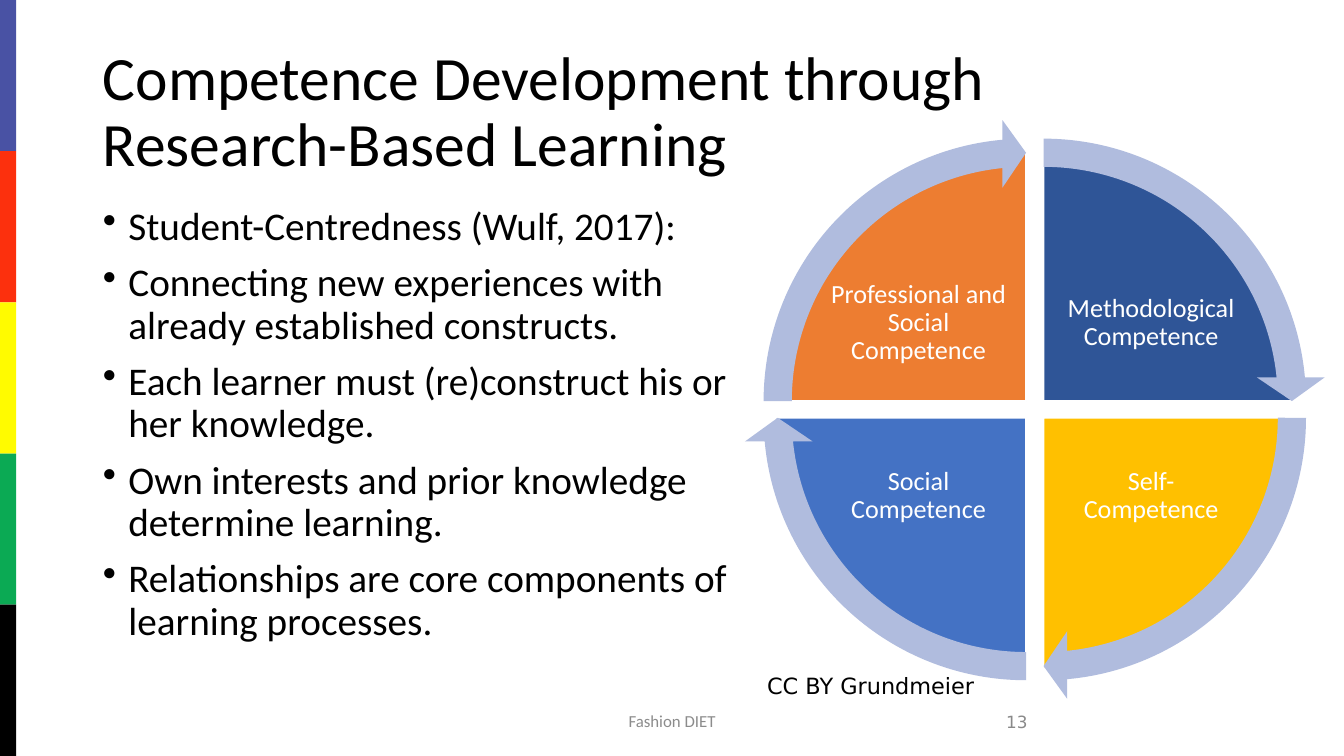
import dataclasses

import lxml.etree
import pptx
import pptx.dml.color
import pptx.enum.shapes
import pptx.enum.text
import pptx.oxml.ns
import pptx.util

SHAPE = pptx.enum.shapes.MSO_SHAPE
ALIGN = pptx.enum.text.PP_ALIGN
ANCHOR = pptx.enum.text.MSO_ANCHOR

COLS, ROWS = 100, 56.25
CELL = pptx.util.Inches(10) / COLS
MID = (77, 30.47)
GAP = (0.65, 0.62)
QUARTER = 54


@dataclasses.dataclass(frozen=True)
class Theme:
    sans: str = "Calibri"
    plain: str = "DejaVu Sans"
    ink: str = "000000"
    white: str = "FFFFFF"
    foot: str = "8C8C8C"
    number: str = "898989"
    arrow: str = "B0BCDE"
    stripes: tuple = ("4952A4", "FC300D", "FFFB00", "0BAA54", "000000")
    title: float = 33
    body: float = 21
    label: float = 14
    credit: float = 12
    small: float = 9


THEME = Theme()

POINTS = [
    "Student-Centredness (Wulf, 2017):",
    "Connecting new experiences with already established constructs.",
    "Each learner must (re)construct his or her knowledge.",
    "Own interests and prior knowledge determine learning.",
    "Relationships are core components of learning processes.",
]

SKILLS = [
    ("Methodological Competence", "2F5597", 1, -1, 162),
    ("Self-Competence", "FFC000", 1, 1, 0),
    ("Social Competence", "4472C4", -1, 1, 54),
    ("Professional and Social Competence", "ED7D31", -1, -1, 108),
]


def color(code):
    return pptx.dml.color.RGBColor.from_string(code)


def grid(*cells):
    return [round(cell * CELL) for cell in cells]


def center(x, y, width, height):
    return x - width / 2, y - height / 2, width, height


def add_form(slide, kind, box, fill, line=None, turns=()):
    form = slide.shapes.add_shape(kind, *grid(*box))
    form.shadow.inherit = False
    form.fill.solid()
    form.fill.fore_color.rgb = color(fill)
    if line:
        form.line.color.rgb = color(line)
        form.line.width = pptx.util.Pt(1)
    else:
        form.line.fill.background()
    for index, turn in enumerate(turns):
        form.adjustments[index] = turn


def add_bullet(para):
    props = para._p.get_or_add_pPr()
    indent = pptx.util.Inches(0.19)
    props.set("marL", str(indent))
    props.set("indent", str(-indent))
    mark = lxml.etree.SubElement(props, pptx.oxml.ns.qn("a:buChar"))
    mark.set("char", "•")


def add_text(slide, box, lines, size, ink=THEME.ink, face=THEME.sans,
             align=ALIGN.LEFT, anchor=ANCHOR.MIDDLE, inset=(0.75, 0.38),
             space=1, before=0, bullet=False):
    frame = slide.shapes.add_textbox(*grid(*box)).text_frame
    frame.word_wrap = True
    frame.vertical_anchor = anchor
    frame.margin_left, frame.margin_top = grid(*inset)
    frame.margin_right, frame.margin_bottom = grid(*inset)
    for index, line in enumerate(lines):
        para = frame.add_paragraph() if index else frame.paragraphs[0]
        para.text = line
        para.alignment = align
        para.line_spacing = space
        if index:
            para.space_before = pptx.util.Pt(before)
        if bullet:
            add_bullet(para)
        para.font.name = face
        para.font.size = pptx.util.Pt(size)
        para.font.color.rgb = color(ink)


def add_stripes(slide):
    height = ROWS / len(THEME.stripes)
    for index, fill in enumerate(THEME.stripes):
        add_form(slide, SHAPE.RECTANGLE, (0, index * height, 1.2, height), fill)


def add_wheel(slide):
    hubs = [(MID[0] + dx * GAP[0], MID[1] + dy * GAP[1])
            for _, _, dx, dy, _ in SKILLS]
    for (name, fill, dx, dy, start), hub in zip(SKILLS, hubs):
        add_form(slide, SHAPE.PIE, center(*hub, 37.3, 37.3), fill,
                 THEME.white, (start, (start + QUARTER) % (4 * QUARTER)))
        spot = MID[0] + dx * 8.65, MID[1] + dy * 6.45
        add_text(slide, center(*spot, 13.8, 10.2), [name], THEME.label,
                 THEME.white, align=ALIGN.CENTER, inset=(0.2, 0.2), space=0.9)
    head = 3.28
    for (_, _, _, _, start), hub in zip(SKILLS, hubs):
        add_form(slide, SHAPE.CIRCULAR_ARROW, center(*hub, 42, 42), THEME.arrow,
                 turns=(0.05, head, start + QUARTER - head, start, 0.06))


def main():
    deck = pptx.Presentation()
    deck.slide_width, deck.slide_height = grid(COLS, ROWS)
    slide = deck.slides.add_slide(deck.slide_layouts[6])
    add_stripes(slide)
    add_text(slide, (6.9, 3, 86.2, 10.9),
             ["Competence Development through Research-Based Learning"],
             THEME.title, space=0.9)
    add_text(slide, (6.9, 15, 49.4, 35.7), POINTS, THEME.body,
             anchor=ANCHOR.TOP, space=0.9, before=7.5, bullet=True)
    add_text(slide, (33.1, 52.1, 33.8, 3), ["Fashion DIET"], THEME.small,
             THEME.foot, align=ALIGN.CENTER)
    add_text(slide, (54.7, 52.2, 22.5, 3), ["13"], THEME.small,
             THEME.number, THEME.plain, ALIGN.RIGHT)
    add_wheel(slide)
    add_text(slide, (56.1, 49.5, 17.7, 3), ["CC BY Grundmeier"], THEME.credit,
             face=THEME.plain, anchor=ANCHOR.TOP, inset=(1, 0.5))
    deck.save("out.pptx")


if __name__ == "__main__":
    main()
